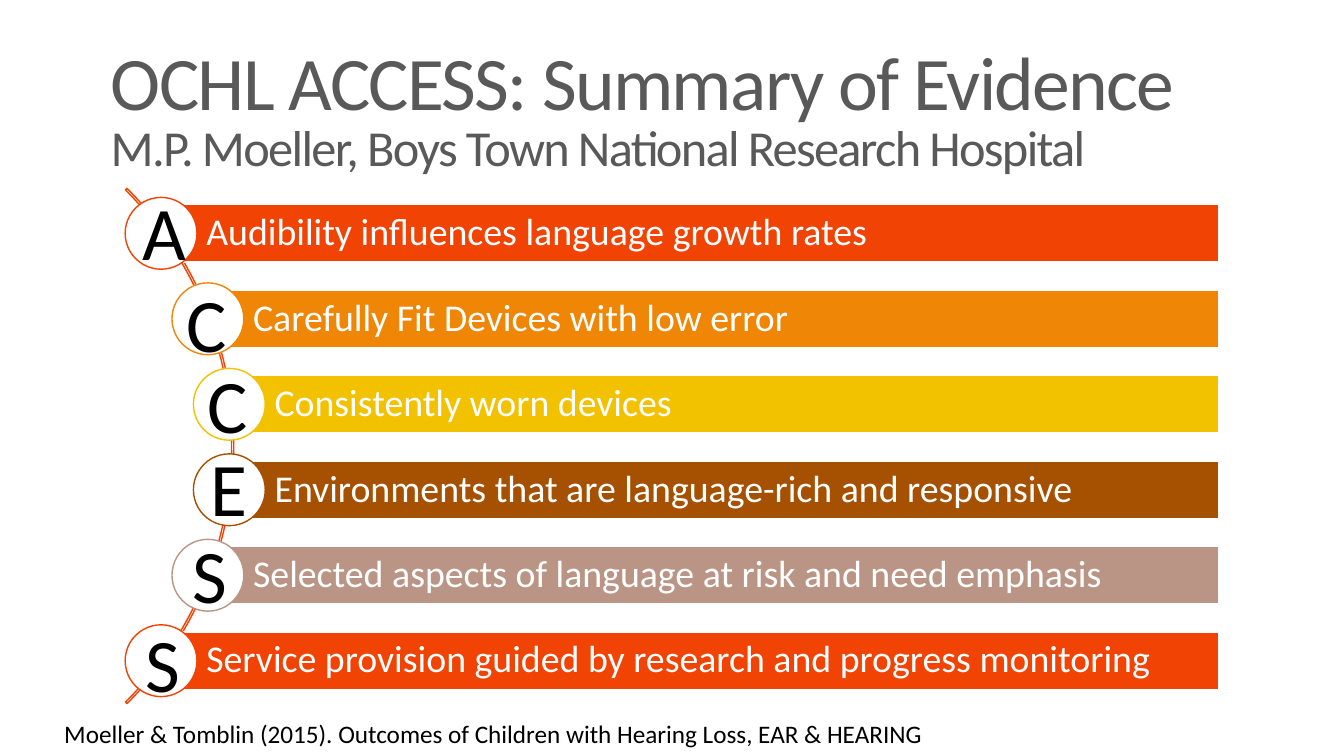
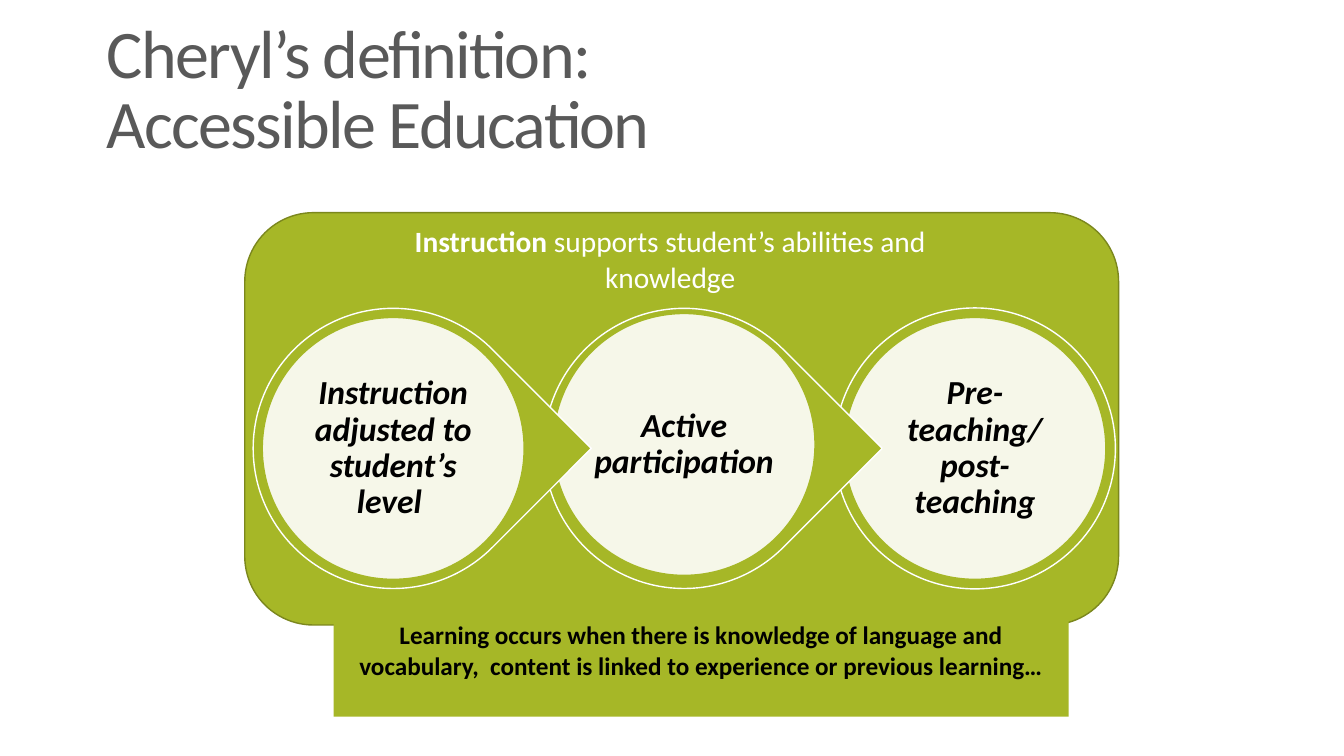
from lxml import etree
from pptx import Presentation
from pptx.dml.color import RGBColor
from pptx.enum import shapes, text
from pptx.oxml import ns
from pptx.util import Cm, Pt

WHITE = RGBColor(0xFF, 0xFF, 0xFF)
BLACK = RGBColor(0x00, 0x00, 0x00)
GRAY = RGBColor(0x59, 0x59, 0x59)
RED = RGBColor(0xF0, 0x43, 0x04)
ORANGE = RGBColor(0xEF, 0x86, 0x06)
YELLOW = RGBColor(0xF2, 0xC1, 0x00)
BROWN = RGBColor(0xA6, 0x50, 0x01)
TAUPE = RGBColor(0xBA, 0x95, 0x85)
GREEN = RGBColor(0xA6, 0xB7, 0x27)
DARK_GREEN = RGBColor(0x7B, 0x87, 0x1D)

KIND = shapes.MSO_SHAPE
ANCHOR = text.MSO_ANCHOR
CENTER = text.PP_ALIGN.CENTER


def set_all(target, values):
    for name, value in values.items():
        setattr(target, name, value)


class Deck:
    FONT = "Calibri"
    TITLE_SPACING = "-120"

    def __init__(self):
        self.prs = Presentation()
        set_all(self.prs, {"slide_width": Cm(33.87), "slide_height": Cm(19.05)})
        self.slide = None

    def new_slide(self):
        self.slide = self.prs.slides.add_slide(self.prs.slide_layouts[6])

    def put_text(self, sp, lines, size, color, align=None, spacing=None,
                 frame=None, **font):
        """Fill one paragraph; each line is a list of (text, font values) runs."""
        tf = sp.text_frame
        set_all(tf, {"word_wrap": True, "vertical_anchor": ANCHOR.TOP, **(frame or {})})
        p = tf.paragraphs[0]
        set_all(p, {"alignment": align, "line_spacing": spacing})
        for i, line in enumerate(lines):
            if i:
                p.add_line_break()
            for words, extra in line:
                r = p.add_run()
                r.text = words
                set_all(r.font, {"name": self.FONT, "size": Pt(size), **font, **extra})
                r.font.color.rgb = color
        return p

    def label(self, box, lines, size, color, **fmt):
        sp = self.slide.shapes.add_textbox(*map(Cm, box))
        return self.put_text(sp, lines, size, color, **fmt)

    def title(self, box, lines, size):
        p = self.label(box, lines, size, GRAY, spacing=0.85,
                       frame={"vertical_anchor": ANCHOR.MIDDLE})
        for r in p.runs:
            r.font._element.set("spc", self.TITLE_SPACING)

    def shape(self, kind, box, fill=None, line=None, alpha=None, turn=0, adjust=()):
        sp = self.slide.shapes.add_shape(kind, *map(Cm, box))
        sp.shadow.inherit = False
        sp.rotation = turn
        for i, value in enumerate(adjust):
            sp.adjustments[i] = value
        if fill is None:
            sp.fill.background()
        else:
            sp.fill.solid()
            sp.fill.fore_color.rgb = fill
        if alpha:
            clr = sp.fill._xPr.find(".//" + ns.qn("a:srgbClr"))
            etree.SubElement(clr, ns.qn("a:alpha")).set("val", str(alpha * 1000))
        if line is None:
            sp.line.fill.background()
        else:
            sp.line.color.rgb = line
            sp.line.width = Pt(1)
        return sp

    def round(self, kind, x, y, size, **style):
        """Draw a shape of equal width and height around a centre."""
        return self.shape(kind, (x - size / 2, y - size / 2, size, size), **style)


def access_slide(deck):
    deck.new_slide()
    deck.title((2.54, 0.94, 27.94, 3.81), [
        [("OCHL ACCESS: Summary of Evidence", {})],
        [("M.P. Moeller, Boys Town National Research Hospital", {"size": Pt(36)})],
    ], 54)
    deck.round(KIND.BLOCK_ARC, -3.29, 11.24, 18.36, line=RED, adjust=(189, 27, 0.003))

    # letter, sentence, colour, left edge of bar, nudge of letter across and down
    rows = [
        ("A", "Audibility influences language growth rates", RED, 4.06, 0.08, -0.05),
        ("C", "Carefully Fit Devices with low error", ORANGE, 5.24, -0.03, 0.11),
        ("C", "Consistently worn devices", YELLOW, 5.78, -0.03, -0.02),
        ("E", "Environments that are language-rich and responsive", BROWN, 5.78, 0, -0.06),
        ("S", "Selected aspects of language at risk and need emphasis", TAUPE, 5.24, 0.05, -0.03),
        ("S", "Service provision guided by research and progress monitoring", RED, 4.06, 0.05, 0.05),
    ]
    first, last, right, bar_h = 5.88, 16.65, 30.72, 1.44
    pitch = (last - first) / (len(rows) - 1)
    letter_w, letter_h = 1.8, 2.57
    for i, (letter, sentence, color, x, dx, dy) in enumerate(rows):
        y = first + i * pitch
        bar = deck.shape(KIND.RECTANGLE, (x, y - bar_h / 2, right - x, bar_h), color, WHITE)
        deck.put_text(bar, [[(sentence, {})]], 27, WHITE, text.PP_ALIGN.LEFT, 0.9,
                      {"vertical_anchor": ANCHOR.MIDDLE, "margin_left": Cm(1.14)})
        deck.round(KIND.OVAL, x, y, 1.81, fill=WHITE, line=color)
        deck.label((x + dx - letter_w / 2, y + dy - letter_h / 2, letter_w, letter_h),
                   [[(letter, {})]], 54, BLACK, align=CENTER, frame={"word_wrap": False})

    deck.label((1.37, 17.98, 25.02, 1.02), [[(
        "Moeller & Tomblin (2015). Outcomes of Children with Hearing Loss, EAR & HEARING", {})]],
        18, BLACK)


def education_slide(deck):
    deck.new_slide()
    deck.title((2.44, 0.79, 20.02, 3.1), [
        [("Cheryl’s definition:", {})], [("Accessible Education", {})]], 48.6)
    deck.shape(KIND.ROUNDED_RECTANGLE, (6.17, 5.36, 22.02, 10.39), GREEN, DARK_GREEN)

    left, pitch, middle = 9.91, 7.33, 11.3
    inset = dict.fromkeys(
        ("margin_left", "margin_right", "margin_top", "margin_bottom"), Cm(0.04))
    steps = [
        ("Instruction adjusted to student’s level ", 0),
        ("Active participation", -0.1),
        ("Pre-teaching/ post-teaching", 0),
    ]
    for i, (words, dy) in reversed(list(enumerate(steps))):
        x = left + i * pitch
        if i == len(steps) - 1:
            deck.round(KIND.OVAL, x, middle, 7.08, fill=GREEN, line=WHITE)
        else:
            deck.round(KIND.TEAR, x, middle, 7.06, fill=GREEN, line=WHITE,
                       turn=45, adjust=(1,))
        disc = deck.round(KIND.OVAL, x, middle + dy, 6.6, fill=WHITE, line=GREEN, alpha=90)
        deck.put_text(disc, [[(words, {})]], 24, BLACK, CENTER, 0.9,
                      {"vertical_anchor": ANCHOR.MIDDLE, **inset}, bold=True, italic=True)

    deck.label((9.09, 5.51, 15.6, 2.06), [[
        ("Instruction ", {"bold": True}),
        ("supports student’s abilities and knowledge", {})]], 21, WHITE, align=CENTER)
    banner = deck.shape(KIND.RECTANGLE, (8.41, 15.49, 18.52, 2.57), GREEN)
    deck.put_text(banner, [[(
        "Learning occurs when there is knowledge of language and vocabulary,  "
        "content is linked to experience or previous learning…", {})]],
        18, BLACK, CENTER, bold=True)


def main():
    deck = Deck()
    access_slide(deck)
    education_slide(deck)
    deck.prs.save("out.pptx")


if __name__ == "__main__":
    main()
